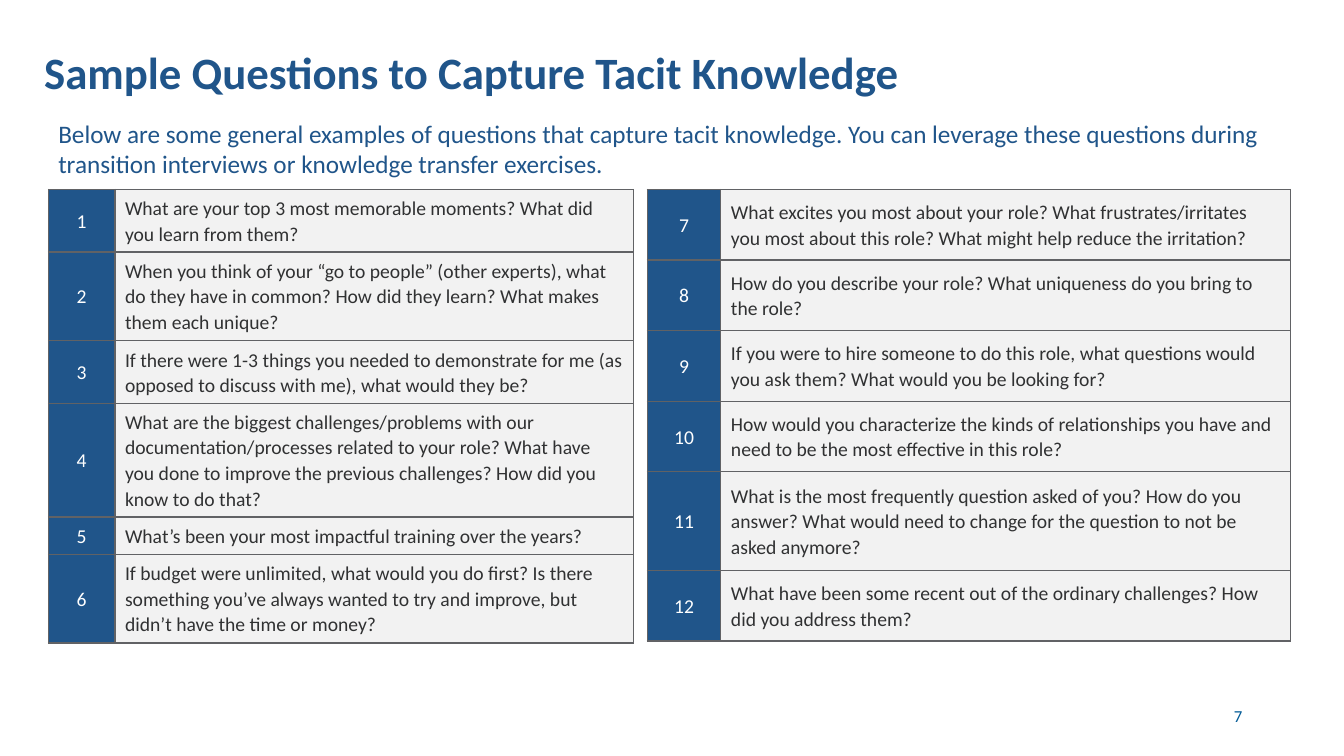
from dataclasses import dataclass

from lxml import etree
from pptx import Presentation
from pptx.dml.color import RGBColor
from pptx.enum.text import MSO_ANCHOR, PP_ALIGN
from pptx.oxml.ns import qn
from pptx.util import Inches, Pt

LEFT, CENTER, RIGHT = PP_ALIGN.LEFT, PP_ALIGN.CENTER, PP_ALIGN.RIGHT
TOP, MIDDLE, BOTTOM = MSO_ANCHOR.TOP, MSO_ANCHOR.MIDDLE, MSO_ANCHOR.BOTTOM
BLANK_LAYOUT = 6


@dataclass(frozen=True)
class Theme:
    font: str = "Calibri"
    blue: str = "20558A"
    page_blue: str = "005A96"
    white: str = "FFFFFF"
    ink: str = "303132"
    panel: str = "F2F2F2"
    border: str = "616265"
    title_size: int = 32
    intro_size: int = 18
    table_size: int = 14
    page_size: int = 12


THEME = Theme()

TITLE = "Sample Questions to Capture Tacit Knowledge"
INTRO = (
    "Below are some general examples of questions that capture tacit knowledge. "
    "You can leverage these questions during transition interviews or knowledge "
    "transfer exercises."
)

# Each entry is a row height in inches and its question
FIRST_QUESTIONS = [
    (0.62, "What are your top 3 most memorable moments? What did you learn from them?"),
    (0.88, "When you think of your “go to people” (other experts), what do they have "
           "in common? How did they learn? What makes them each unique?"),
    (0.62, "If there were 1-3 things you needed to demonstrate for me (as opposed to "
           "discuss with me), what would they be?"),
    (1.13, "What are the biggest challenges/problems with our documentation/processes "
           "related to your role? What have you done to improve the previous "
           "challenges? How did you know to do that?"),
    (0.37, "What’s been your most impactful training over the years?"),
    (0.88, "If budget were unlimited, what would you do first? Is there something "
           "you’ve always wanted to try and improve, but didn’t have the time or money?"),
]
SECOND_QUESTIONS = [
    (0.7, "What excites you most about your role? What frustrates/irritates you most "
          "about this role? What might help reduce the irritation?"),
    (0.7, "How do you describe your role? What uniqueness do you bring to the role?"),
    (0.7, "If you were to hire someone to do this role, what questions would you ask "
          "them? What would you be looking for?"),
    (0.7, "How would you characterize the kinds of relationships you have and need to "
          "be the most effective in this role?"),
    (0.98, "What is the most frequently question asked of you? How do you answer? What "
           "would need to change for the question to not be asked anymore?"),
    (0.7, "What have been some recent out of the ordinary challenges? How did you "
          "address them?"),
]


def write_paragraph(frame, text, size, color, align=LEFT, bold=False, spacing=None):
    paragraph = frame.paragraphs[0]
    paragraph.text = text
    paragraph.alignment = align
    if spacing:
        paragraph.line_spacing = spacing
    paragraph.font.name = THEME.font
    paragraph.font.size = Pt(size)
    paragraph.font.bold = bold
    paragraph.font.color.rgb = RGBColor.from_string(color)


def add_text(slide, box, text, size, color, anchor=TOP, **style):
    shape = slide.shapes.add_textbox(*map(Inches, box))
    shape.text_frame.word_wrap = True
    shape.text_frame.vertical_anchor = anchor
    write_paragraph(shape.text_frame, text, size, color, **style)


def add_borders(cell):
    properties = cell._tc.get_or_add_tcPr()
    for side in ("a:lnL", "a:lnR", "a:lnT", "a:lnB"):
        line = etree.SubElement(properties, qn(side), w=str(Pt(1)))
        fill = etree.SubElement(line, qn("a:solidFill"))
        etree.SubElement(fill, qn("a:srgbClr"), val=THEME.border)


def style_cell(cell, text, fill, color, align):
    cell.margin_left = cell.margin_right = Inches(0.1)
    cell.margin_top = cell.margin_bottom = Inches(0.06)
    cell.vertical_anchor = MIDDLE
    add_borders(cell)
    cell.fill.solid()
    cell.fill.fore_color.rgb = RGBColor.from_string(fill)
    write_paragraph(cell.text_frame, text, THEME.table_size, color, align, spacing=1.07)


def add_question_table(slide, left, top, widths, questions, first_number):
    height = sum(row_height for row_height, _ in questions)
    table = slide.shapes.add_table(
        len(questions), len(widths),
        Inches(left), Inches(top), Inches(sum(widths)), Inches(height),
    ).table
    table.first_row = table.horz_banding = False
    for column, width in zip(table.columns, widths):
        column.width = Inches(width)
    for index, (row_height, question) in enumerate(questions):
        row = table.rows[index]
        row.height = Inches(row_height)
        number_cell, question_cell = row.cells
        number = str(first_number + index)
        style_cell(number_cell, number, THEME.blue, THEME.white, CENTER)
        style_cell(question_cell, question, THEME.panel, THEME.ink, LEFT)


def main():
    presentation = Presentation()
    presentation.slide_width = Inches(13.33)
    presentation.slide_height = Inches(7.5)
    slide = presentation.slides.add_slide(presentation.slide_layouts[BLANK_LAYOUT])

    # Heading and page number
    add_text(slide, (0.34, -0.24, 12.46, 1.27), TITLE, THEME.title_size, THEME.blue,
             anchor=BOTTOM, bold=True, spacing=0.9)
    add_text(slide, (9.42, 6.95, 3, 0.4), "7", THEME.page_size, THEME.page_blue,
             align=RIGHT)

    # Numbered questions in two tables
    add_question_table(slide, 0.48, 1.88, (0.66, 5.14), FIRST_QUESTIONS, 1)
    add_question_table(slide, 6.42, 1.88, (0.73, 5.65), SECOND_QUESTIONS,
                       len(FIRST_QUESTIONS) + 1)

    # Introduction
    add_text(slide, (0.48, 1.12, 12.32, 0.71), INTRO, THEME.intro_size, THEME.blue)

    presentation.save("out.pptx")


if __name__ == "__main__":
    main()
